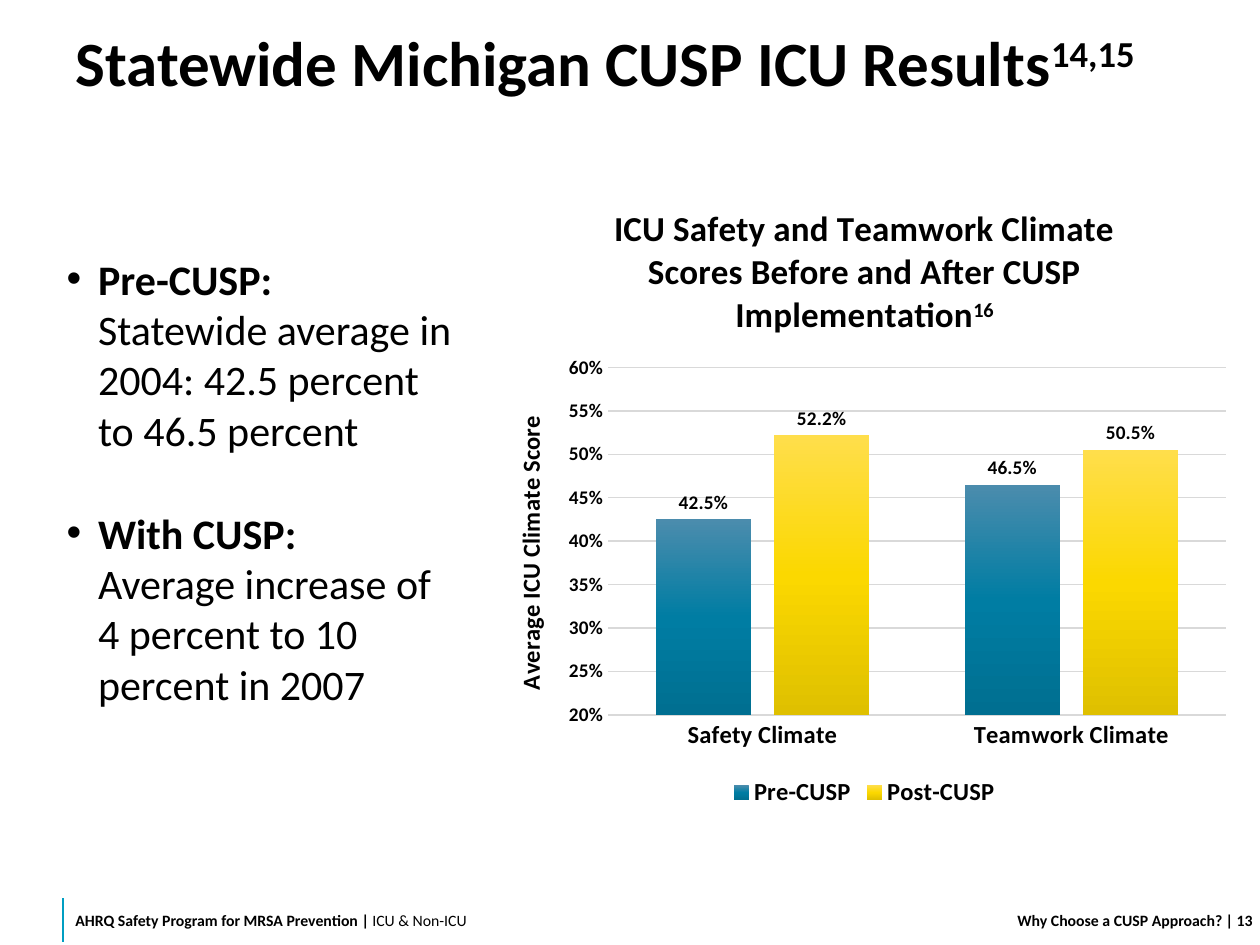
from lxml import etree
from pptx import Presentation
from pptx.chart.data import CategoryChartData
from pptx.dml.color import RGBColor
from pptx.enum.chart import XL_CHART_TYPE, XL_LABEL_POSITION, XL_LEGEND_POSITION, XL_TICK_MARK
from pptx.enum.shapes import MSO_CONNECTOR
from pptx.enum.text import MSO_ANCHOR, PP_ALIGN
from pptx.oxml import parse_xml
from pptx.oxml.ns import nsdecls, qn
from pptx.util import Inches, Pt

COLUMNS = XL_CHART_TYPE.COLUMN_CLUSTERED
OUTSIDE_END = XL_LABEL_POSITION.OUTSIDE_END
BOTTOM = XL_LEGEND_POSITION.BOTTOM
NO_TICK = XL_TICK_MARK.NONE
STRAIGHT = MSO_CONNECTOR.STRAIGHT
MIDDLE, TOP = MSO_ANCHOR.MIDDLE, MSO_ANCHOR.TOP
LEFT, RIGHT = PP_ALIGN.LEFT, PP_ALIGN.RIGHT


class Theme:
    font = "Calibri"
    text = RGBColor(0, 0, 0)
    rule = RGBColor(0x00, 0x9E, 0xC2)
    grid = RGBColor(0xD9, 0xD9, 0xD9)
    blues = ("4B8CAD", "007DA3", "006F91")
    yellows = ("FFDE4B", "FBD800", "DFC000")
    title, body, chart_title = Pt(36), Pt(24), Pt(20)
    axis, value, footer = Pt(14), Pt(11), Pt(9)


def style(font, size, bold=True):
    font.name, font.size, font.bold = Theme.font, size, bold
    font.color.rgb = Theme.text


def add_span(para, text, size, bold=True, raised=False):
    span = para.add_run()
    span.text = text
    style(span.font, size, bold)
    if raised:
        span.font._element.set("baseline", "30000")


deck = Presentation()
deck.slide_width, deck.slide_height = Inches(10), Inches(7.5)
page = deck.slides.add_slide(deck.slide_layouts[5])

# Title
title = page.shapes.title
title.left, title.top, title.width, title.height = Inches(0.5), Inches(0), Inches(9), Inches(1)
frame = title.text_frame
frame.word_wrap = True
frame.vertical_anchor = MIDDLE
frame.margin_left = frame.margin_right = frame.margin_top = Inches(0.1)
frame.margin_bottom = Inches(0.05)
para = frame.paragraphs[0]
para.alignment = LEFT
para.line_spacing = 0.9
add_span(para, "Statewide Michigan CUSP ICU Results", Theme.title)
add_span(para, "14,15", Theme.title, raised=True)

# Bulleted findings
findings = (
    ("Pre-CUSP:", "Statewide average in 2004: 42.5 percent to 46.5 percent"),
    ("With CUSP:", "Average increase of 4 percent to 10 percent in 2007"),
)
box = page.shapes.add_textbox(Inches(0.43), Inches(1.96), Inches(3.29), Inches(4.27))
frame = box.text_frame
frame.word_wrap = True
frame.vertical_anchor = TOP
for index, (heading, detail) in enumerate(findings):
    para = frame.paragraphs[0] if index == 0 else frame.add_paragraph()
    properties = para._p.get_or_add_pPr()
    properties.set("marL", str(Inches(0.25)))
    properties.set("indent", str(-Inches(0.25)))
    etree.SubElement(properties, qn("a:buFont")).set("typeface", "Arial")
    etree.SubElement(properties, qn("a:buChar")).set("char", "•")
    para.space_before = Pt(30 * index)
    add_span(para, heading, Theme.body)
    para.add_line_break()
    add_span(para, detail, Theme.body, bold=False)

# Climate score chart
scores = CategoryChartData()
scores.categories = ("Safety Climate", "Teamwork Climate")
scores.add_series("Pre-CUSP", (0.425, 0.465))
scores.add_series("Post-CUSP", (0.522, 0.505))
chart = page.shapes.add_chart(
    COLUMNS, Inches(3.87), Inches(1.44), Inches(5.98), Inches(5.01), scores
).chart
style(chart.font, Theme.value)

chart.has_title = True
chart.chart_title.include_in_layout = False
para = chart.chart_title.text_frame.paragraphs[0]
add_span(para, "ICU Safety and Teamwork Climate Scores Before and After CUSP Implementation",
         Theme.chart_title)
add_span(para, "16", Theme.chart_title, raised=True)

chart.has_legend = True
chart.legend.position = BOTTOM
chart.legend.include_in_layout = False
style(chart.legend.font, Theme.axis)

category_axis = chart.category_axis
category_axis.major_tick_mark = NO_TICK
category_axis.format.line.color.rgb = Theme.grid
category_axis.format.line.width = Pt(1)
style(category_axis.tick_labels.font, Theme.axis)

value_axis = chart.value_axis
value_axis.minimum_scale, value_axis.maximum_scale = 0.2, 0.6
value_axis.major_unit = 0.05
value_axis.major_tick_mark = NO_TICK
value_axis.format.line.fill.background()
value_axis.major_gridlines.format.line.color.rgb = Theme.grid
value_axis.major_gridlines.format.line.width = Pt(0.75)
value_axis.tick_labels.number_format = "0%"
value_axis.tick_labels.number_format_is_linked = False
style(value_axis.tick_labels.font, Theme.value)
add_span(value_axis.axis_title.text_frame.paragraphs[0], "Average ICU Climate Score", Theme.axis)

plot = chart.plots[0]
plot.vary_by_categories = False
plot.gap_width, plot.overlap = 100, -24
for series, shades in zip(plot.series, (Theme.blues, Theme.yellows)):
    series.format.fill.gradient()
    series.format.fill.gradient_angle = 270
    stops = series._element.find(".//" + qn("a:gsLst"))
    for stop in list(stops):
        stops.remove(stop)
    for index, shade in enumerate(shades):
        stop = etree.SubElement(stops, qn("a:gs"), pos=str(50000 * index))
        etree.SubElement(stop, qn("a:srgbClr"), val=shade)
    labels = series.data_labels
    labels.show_value = True
    labels.position = OUTSIDE_END
    labels.number_format = "0.0%"
    labels.number_format_is_linked = False
    style(labels.font, Theme.value)

# Fixed plot area, as fractions of the chart
plot_area = chart._chartSpace.chart.plotArea
for layout in plot_area.findall(qn("c:layout")):
    plot_area.remove(layout)
plot_area.insert(0, parse_xml(
    f'<c:layout {nsdecls("c")}><c:manualLayout><c:layoutTarget val="inner"/>'
    '<c:xMode val="edge"/><c:yMode val="edge"/><c:x val="0.16"/><c:y val="0.295"/>'
    '<c:w val="0.82"/><c:h val="0.55"/></c:manualLayout></c:layout>'))

# Footer
rule = page.shapes.add_connector(STRAIGHT, Inches(0.5), Inches(7.13), Inches(0.5), Inches(7.48))
rule.line.color.rgb = Theme.rule
rule.line.width = Pt(1)
etree.SubElement(rule._element.spPr, qn("a:effectLst"))

footers = (
    (0.5, 4.1, 0.1, 0.1, LEFT,
     (("AHRQ Safety Program for MRSA Prevention | ", True), ("ICU & Non-ICU", False))),
    (7.1, 2.6, 0.1, 0, RIGHT, (("Why Choose a CUSP Approach?", True),)),
    (9.7, 0.3, 0, 0, LEFT, ((" | 13", True),)),
)
for left, width, inset_left, inset_right, alignment, spans in footers:
    box = page.shapes.add_textbox(Inches(left), Inches(7.1), Inches(width), Inches(0.4))
    frame = box.text_frame
    frame.word_wrap = True
    frame.vertical_anchor = MIDDLE
    frame.margin_left, frame.margin_right = Inches(inset_left), Inches(inset_right)
    para = frame.paragraphs[0]
    para.alignment = alignment
    for text, bold in spans:
        add_span(para, text, Theme.footer, bold)

deck.save("out.pptx")
